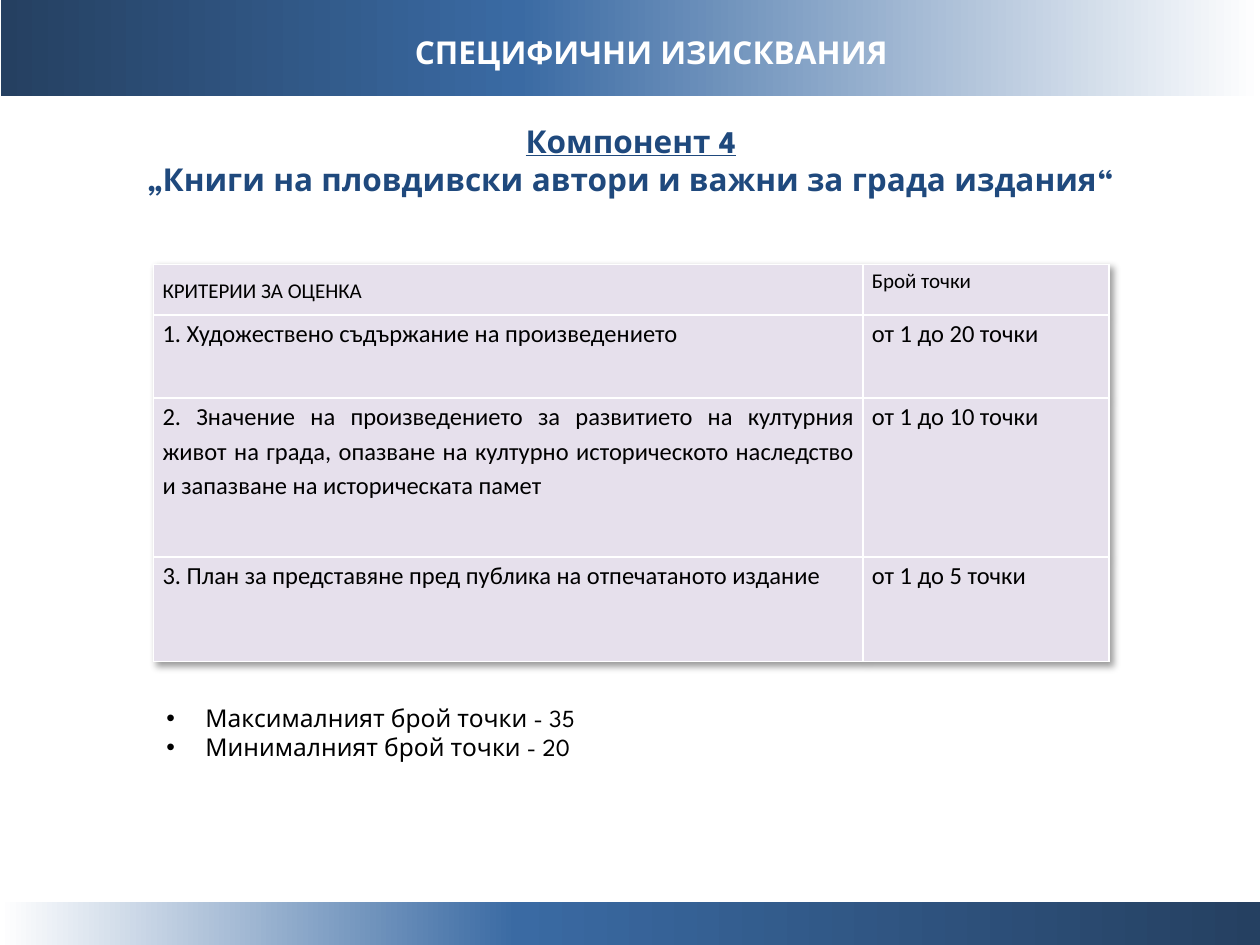
"""Build the slide with the evaluation criteria of component 4."""
import copy

import pptx
import pptx.dml.color
import pptx.enum.shapes
import pptx.enum.text
import pptx.oxml
import pptx.oxml.ns
import pptx.util
from pptx.dml.color import RGBColor
from pptx.enum.text import MSO_ANCHOR, PP_ALIGN
from pptx.util import Inches, Pt

NAVY = RGBColor(0x25, 0x40, 0x61)
BLUE = RGBColor(0x3A, 0x6A, 0xA3)
HEADING = RGBColor(0x1F, 0x49, 0x7D)
LILAC = RGBColor(0xE6, 0xE0, 0xEC)
WHITE = RGBColor(0xFF, 0xFF, 0xFF)
BLACK = RGBColor(0, 0, 0)
DISPLAY_FONT = "League Spartan"
TABLE_FONT = "Calibri"
NAMESPACE = pptx.oxml.ns.nsdecls("a")

LEFT_EDGE = 1.22
COLUMN_WIDTHS = (5.63, 1.95)
ROW_HEIGHTS = (0.4, 0.66, 1.26, 0.83)
CRITERIA = (
    ("КРИТЕРИИ ЗА ОЦЕНКА", "Брой точки"),
    ("1. Художествено съдържание на произведението", "от 1 до 20 точки"),
    ("2. Значение на произведението за развитието на културния живот на града, "
     "опазване на културно историческото наследство и запазване на историческата памет",
     "от 1 до 10 точки"),
    ("3. План за представяне пред публика на отпечатаното издание", "от 1 до 5 точки"),
)


def place(shape, left, top, width, height):
    """Move and size a shape, in inches."""
    shape.left, shape.top = Inches(left), Inches(top)
    shape.width, shape.height = Inches(width), Inches(height)


def style(paragraph, size, color, name=DISPLAY_FONT, bold=False):
    """Set the font of a whole paragraph."""
    font = paragraph.font
    font.name, font.size, font.bold = name, Pt(size), bold
    font.color.rgb = color


def add_band(page, left, top, width, height, colors):
    """Add a horizontal band that fades through three colours."""
    band = page.shapes.add_shape(
        pptx.enum.shapes.MSO_SHAPE.RECTANGLE,
        Inches(left), Inches(top), Inches(width), Inches(height))
    band.shadow.inherit = False
    band.line.fill.background()
    band.fill.gradient()
    band.fill.gradient_angle = 0
    last = band.fill.gradient_stops[1]._gs
    last.addprevious(copy.deepcopy(last))
    for stop, position, color in zip(band.fill.gradient_stops, (0, 0.41, 1), colors):
        stop.position = position
        stop.color.rgb = color
    page.shapes._spTree.insert(2, band._element)


def fill_title(title):
    """Write the slide title on the top band."""
    place(title, 0.67, 0.29, 9, 0.54)
    frame = title.text_frame
    frame.text = "СПЕЦИФИЧНИ ИЗИСКВАНИЯ"
    frame.auto_size = pptx.enum.text.MSO_AUTO_SIZE.NONE
    frame.vertical_anchor = MSO_ANCHOR.MIDDLE
    frame.margin_top, frame.margin_bottom = 0, Inches(0.3)
    frame.paragraphs[0].alignment = PP_ALIGN.CENTER
    style(frame.paragraphs[0], 18, WHITE, bold=True)


def add_subtitle(page, lines):
    """Add the centred component heading with its first line underlined."""
    box = page.shapes.add_textbox(Inches(0.79), Inches(0.92), Inches(8.43), Inches(0.71))
    frame = box.text_frame
    frame.word_wrap = True
    frame.text = "\n".join(lines)
    for para in frame.paragraphs:
        para.alignment = PP_ALIGN.CENTER
        style(para, 18, HEADING, bold=True)
    frame.paragraphs[0].font.underline = True


def fill_bullets(body, lines):
    """Write the bulleted list of point limits."""
    place(body, LEFT_EDGE, 5.53, 5, 0.57)
    frame = body.text_frame
    frame.text = "\n".join(lines)
    frame.auto_size = pptx.enum.text.MSO_AUTO_SIZE.NONE
    for para in frame.paragraphs:
        properties = para._p.get_or_add_pPr()
        properties.set("marL", str(Inches(0.31)))
        properties.set("indent", str(-Inches(0.31)))
        para.space_before = Pt(0)
        for bullet in ('<a:buFont %s typeface="Arial"/>', '<a:buChar %s char="•"/>'):
            properties.append(pptx.oxml.parse_xml(bullet % NAMESPACE))
        style(para, 14, BLACK)


def fill_cell(cell, text, size):
    """Write a justified cell with white borders and a lilac fill."""
    properties = cell._tc.get_or_add_tcPr()
    for side in "LRTB":
        properties.append(pptx.oxml.parse_xml(
            f'<a:ln{side} {NAMESPACE} w="{Pt(1)}"><a:solidFill>'
            f'<a:srgbClr val="{WHITE}"/></a:solidFill></a:ln{side}>'))
    cell.fill.solid()
    cell.fill.fore_color.rgb = LILAC
    cell.margin_left = cell.margin_right = Inches(0.07)
    cell.margin_top = cell.margin_bottom = 0
    cell.text = text
    para = cell.text_frame.paragraphs[0]
    para.alignment = PP_ALIGN.JUSTIFY
    para.line_spacing, para.space_after = 1.15, Pt(10)
    style(para, size, BLACK, TABLE_FONT)


def add_criteria_table(page):
    """Add the table of criteria and points, with its shadow."""
    table = page.shapes.add_table(
        len(ROW_HEIGHTS), len(COLUMN_WIDTHS), Inches(LEFT_EDGE), Inches(2.1),
        Inches(sum(COLUMN_WIDTHS)), Inches(sum(ROW_HEIGHTS))).table
    table.first_row = table.horz_banding = False
    table._tbl.tblPr.insert(0, pptx.oxml.parse_xml(
        f'<a:effectLst {NAMESPACE}><a:outerShdw blurRad="50800" dist="38100" '
        'dir="2700000" algn="tl" rotWithShape="0"><a:srgbClr val="000000">'
        '<a:alpha val="40000"/></a:srgbClr></a:outerShdw></a:effectLst>'))
    for column, width in zip(table.columns, COLUMN_WIDTHS):
        column.width = Inches(width)
    for index, (row, height) in enumerate(zip(table.rows, ROW_HEIGHTS)):
        row.height = Inches(height)
        for cell, text in zip(row.cells, CRITERIA[index]):
            fill_cell(cell, text, 14 if index else 12)
    table.cell(0, 0).vertical_anchor = MSO_ANCHOR.MIDDLE


def main():
    """Build and save the deck."""
    deck = pptx.Presentation()
    deck.slide_width, deck.slide_height = Inches(10), Inches(7.5)
    page = deck.slides.add_slide(deck.slide_layouts[1])
    add_band(page, 0, 7.16, 10, 0.34, (WHITE, BLUE, NAVY))
    add_band(page, 0.01, 0, 10, 0.76, (NAVY, BLUE, WHITE))
    fill_title(page.shapes.title)
    add_subtitle(page, (
        "Компонент 4", "„Книги на пловдивски автори и важни за града издания“"))
    add_criteria_table(page)
    fill_bullets(page.placeholders[1], (
        "Максималният брой точки - 35", "Минималният брой точки - 20"))
    deck.save("out.pptx")


if __name__ == "__main__":
    main()
